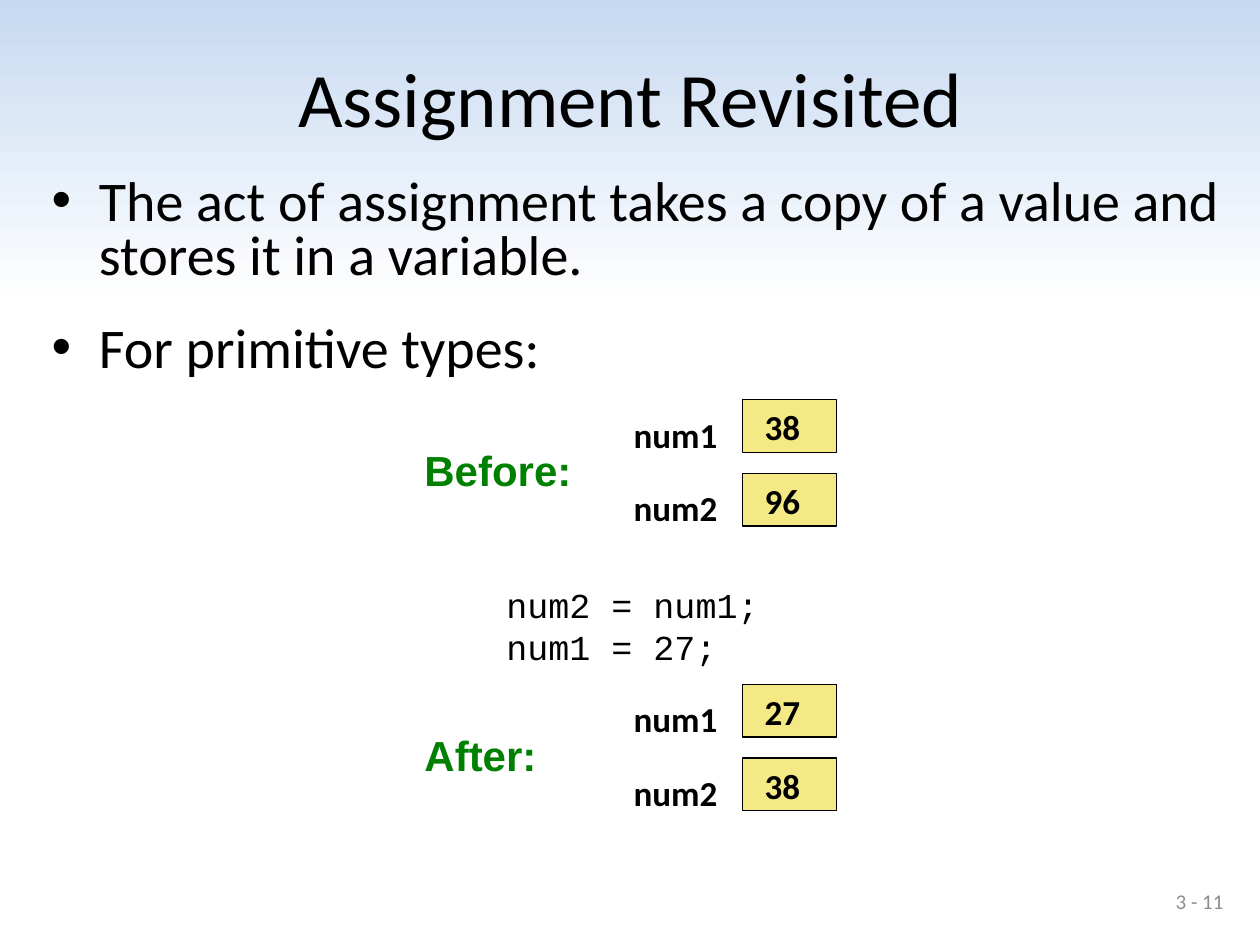
from lxml import etree
from pptx import Presentation
from pptx import util as u
from pptx.dml.color import RGBColor
from pptx.enum import shapes, text
from pptx.oxml import ns

WIDE, HIGH = 10, 7.5
BLACK = RGBColor(0, 0, 0)
WHITE = RGBColor(255, 255, 255)
SKY = RGBColor(0xC6, 0xD9, 0xF1)
GOLD = RGBColor(0xF5, 0xE9, 0x85)
GREEN = RGBColor(0, 0x80, 0)
GREY = RGBColor(0x8C, 0x8C, 0x8C)

LABEL, NAME, CELL, VALUE = 3.27, 4.93, 5.89, 5.97
STEP = 0.585
STATES = [
    ("Before:", 3.17, [("num1", "38"), ("num2", "96")]),
    ("After:", 5.43, [("num1", "27"), ("num2", "38")]),
]


def place(shape, left, top, width, height):
    shape.left, shape.top = u.Inches(left), u.Inches(top)
    shape.width, shape.height = u.Inches(width), u.Inches(height)


def style(frame, size, font="Calibri", color=BLACK, bold=False):
    for para in frame.paragraphs:
        for run in para.runs:
            run.font.size = u.Pt(size)
            run.font.name = font
            run.font.color.rgb = color
            run.font.bold = bold


def shade(slide):
    fill = slide.background.fill
    fill.gradient()
    fill.gradient_angle = 90
    for stop, (spot, color) in zip(fill.gradient_stops, [(0.68, WHITE), (1, SKY)]):
        stop.position = spot
        stop.color.rgb = color


def add_title(slide, words):
    title = slide.shapes.title
    place(title, 0.19, 0.3, 9.63, 0.94)
    title.text_frame.text = words
    title.text_frame.auto_size = text.MSO_AUTO_SIZE.NONE
    style(title.text_frame, 44)


def add_list(slide, items):
    body = slide.placeholders[1]
    place(body, 0.31, 1.37, 9.51, 5.58)
    frame = body.text_frame
    frame.text = "\n".join(items)
    frame.auto_size = text.MSO_AUTO_SIZE.NONE
    for para in frame.paragraphs:
        para.line_spacing = 0.8
        gap = etree.SubElement(para._p.get_or_add_pPr(), ns.qn("a:spcBef"))
        etree.SubElement(gap, ns.qn("a:spcPct"), val="70000")
    style(frame, 32)


def add_text(parent, words, left, top, width, height, size, **look):
    box = parent.shapes.add_textbox(*map(u.Inches, (left, top, width, height)))
    frame = box.text_frame
    frame.text = words
    frame.word_wrap = False
    frame.auto_size = text.MSO_AUTO_SIZE.SHAPE_TO_FIT_TEXT
    style(frame, size, **look)
    return frame


def add_cell(parent, left, top):
    cell = parent.shapes.add_shape(
        shapes.MSO_SHAPE.RECTANGLE, *map(u.Inches, (left, top, 0.75, 0.42)))
    cell.shadow.inherit = False
    cell.fill.solid()
    cell.fill.fore_color.rgb = GOLD
    cell.line.color.rgb = BLACK
    cell.line.width = u.Pt(0.75)


def add_state(slide, label, top, pairs):
    group = slide.shapes.add_group_shape()
    for row, (name, value) in enumerate(pairs):
        y = top + row * STEP
        add_cell(group, CELL, y)
        add_text(group, name, NAME, y + 0.06, 0.87, 0.43, 20, bold=True)
        add_text(group, value, VALUE, y, 0.53, 0.43, 20, bold=True)
    width = 1.37 if label == "Before:" else 1.09
    add_text(group, label, LABEL, top + 0.31, width, 0.5, 24,
             font="Arial", color=GREEN, bold=True)


def add_page(slide, words):
    frame = add_text(slide, words, 7.48, 6.95, 2.33, 0.4, 12, color=GREY)
    frame.auto_size = text.MSO_AUTO_SIZE.NONE
    frame.word_wrap = True
    frame.vertical_anchor = text.MSO_ANCHOR.MIDDLE
    frame.paragraphs[0].alignment = text.PP_ALIGN.RIGHT


def main():
    deck = Presentation()
    deck.slide_width, deck.slide_height = u.Inches(WIDE), u.Inches(HIGH)
    slide = deck.slides.add_slide(deck.slide_layouts[1])
    shade(slide)
    add_title(slide, "Assignment Revisited")
    add_list(slide, [
        "The act of assignment takes a copy of a value and stores it in a variable.",
        "For primitive types:",
    ])
    add_page(slide, "3 - 11")
    for state in STATES:
        add_state(slide, *state)
    add_text(slide, "num2 = num1;\nnum1 = 27;", 3.92, 4.58, 2.22, 0.77, 20,
             font="Courier New")
    deck.save("out.pptx")


if __name__ == "__main__":
    main()
